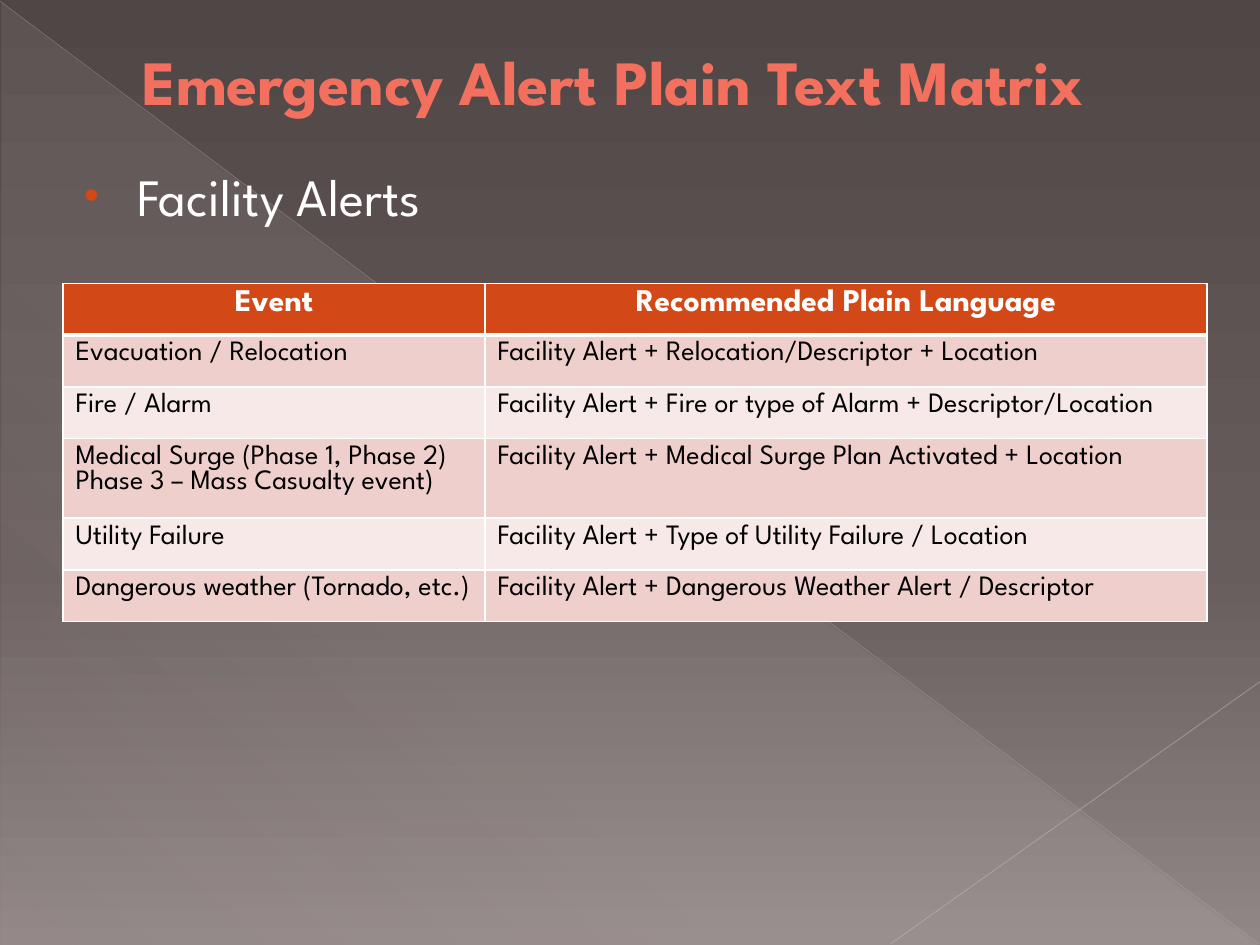
from pptx import Presentation
from pptx.dml.color import RGBColor
from pptx.enum.shapes import MSO_CONNECTOR, MSO_SHAPE
from pptx.enum.text import MSO_ANCHOR, PP_ALIGN
from pptx.oxml import parse_xml
from pptx.oxml.ns import nsdecls
from pptx.util import Inches, Pt

TITLE = "Emergency Alert Plain Text Matrix"
SECTION = "Facility Alerts"
HEADER = ("Event", "Recommended Plain Language")
EVENTS = [
    ("Evacuation / Relocation", "Facility Alert + Relocation/Descriptor + Location"),
    ("Fire / Alarm", "Facility Alert + Fire or type of Alarm + Descriptor/Location"),
    ("Medical Surge (Phase 1, Phase 2)\nPhase 3 – Mass Casualty event)",
     "Facility Alert + Medical Surge Plan Activated + Location"),
    ("Utility Failure", "Facility Alert + Type of Utility Failure / Location"),
    ("Dangerous weather (Tornado, etc.)", "Facility Alert + Dangerous Weather Alert / Descriptor"),
]
COLUMN_WIDTHS = (3.35, 5.73)
ROW_HEIGHT = 0.41
DIAGONALS = [
    ((0, 0.01), (9.99, 7.49), "C1BEBE", 0.39, 35),
    ((10, 5.41), (7.07, 7.49), "C7C5C5", 0.47, 45),
]
THEME = {
    "font": "League Spartan",
    "title": "F4705E", "accent": "D34817", "light": "FFFFFF", "dark": "000000",
    "bands": ("EFCFCC", "F7E9E8"),
    "backdrop": [(0, "4F4646", 100), (60, "685D5D", 100), (100, "928787", 100)],
    "wedge": [(0, "E9E5DC", 10), (70, "E9E5DC", 8), (100, "E9E5DC", 1)],
    "title_size": 36, "section_size": 30, "header_size": 18, "cell_size": 16,
}


def gradient(stops, angle):
    stop_xml = "".join(
        f'<a:gs pos="{position * 1000}"><a:srgbClr val="{color}">'
        f'<a:alpha val="{alpha * 1000}"/></a:srgbClr></a:gs>'
        for position, color, alpha in stops)
    return parse_xml(
        f'<a:gradFill {nsdecls("a")} rotWithShape="1"><a:gsLst>{stop_xml}</a:gsLst>'
        f'<a:lin ang="{angle * 60000}" scaled="0"/></a:gradFill>')


def swap_gradient(fill, holder, stops, angle):
    fill.gradient()
    old = holder.find(".//{*}gradFill")
    old.getparent().replace(old, gradient(stops, angle))


def style(paragraph, size, color, bold=False):
    for run in paragraph.runs:
        run.font.name = THEME["font"]
        run.font.size = Pt(size)
        run.font.bold = bold
        run.font.color.rgb = RGBColor.from_string(color)


def add_backdrop(slide):
    swap_gradient(slide.background.fill, slide.element, THEME["backdrop"], 90)
    wedge = slide.shapes.add_shape(
        MSO_SHAPE.RIGHT_TRIANGLE, Inches(0.01), Inches(0.02), Inches(9.98), Inches(7.48))
    wedge.shadow.inherit = False
    wedge.line.fill.background()
    swap_gradient(wedge.fill, wedge.element, THEME["wedge"], 133)
    for start, end, color, width, alpha in DIAGONALS:
        diagonal = slide.shapes.add_connector(
            MSO_CONNECTOR.STRAIGHT, *map(Inches, start + end))
        diagonal.line.width = Pt(width)
        diagonal.line.color.rgb = RGBColor.from_string(color)
        diagonal.element.find(".//{*}srgbClr").append(
            parse_xml(f'<a:alpha {nsdecls("a")} val="{alpha * 1000}"/>'))
        diagonal.element.spPr.append(parse_xml(f'<a:effectLst {nsdecls("a")}/>'))


def add_title(slide):
    title = slide.shapes.title
    title.left, title.top, title.width, title.height = map(Inches, (0.5, 0.08, 9, 1.12))
    title.text_frame.text = TITLE
    title.text_frame.vertical_anchor = MSO_ANCHOR.MIDDLE
    heading = title.text_frame.paragraphs[0]
    heading.alignment = PP_ALIGN.LEFT
    heading._p.get_or_add_pPr().set("marL", str(Inches(0.53)))
    style(heading, THEME["title_size"], THEME["title"], True)


def add_section(slide):
    section = slide.shapes.add_textbox(*map(Inches, (0.5, 1.25, 9, 0.8)))
    section.text_frame.word_wrap = True
    section.text_frame.text = SECTION
    bullet = section.text_frame.paragraphs[0]
    bullet.space_before = Pt(6)
    style(bullet, THEME["section_size"], THEME["light"])
    properties = bullet._p.get_or_add_pPr()
    properties.set("marL", str(Inches(0.49)))
    properties.set("indent", str(Inches(-0.42)))
    for mark in (f'<a:buClr {nsdecls("a")}><a:srgbClr val="{THEME["accent"]}"/></a:buClr>',
                 f'<a:buSzPct {nsdecls("a")} val="80000"/>',
                 f'<a:buFont {nsdecls("a")} typeface="Arial"/>',
                 f'<a:buChar {nsdecls("a")} char="•"/>'):
        properties.append(parse_xml(mark))


def add_borders(cell, widths):
    for index, (side, width) in enumerate(widths.items()):
        cell._tc.get_or_add_tcPr().insert(index, parse_xml(
            f'<a:ln{side} {nsdecls("a")} w="{Pt(width)}"><a:solidFill>'
            f'<a:srgbClr val="{THEME["light"]}"/></a:solidFill></a:ln{side}>'))


def add_matrix(slide):
    rows = [HEADER, *EVENTS]
    matrix = slide.shapes.add_table(
        len(rows), len(HEADER), Inches(0.5), Inches(2.25),
        Inches(sum(COLUMN_WIDTHS)), Inches(ROW_HEIGHT * len(rows))).table
    for column, width in zip(matrix.columns, COLUMN_WIDTHS):
        column.width = Inches(width)
    for r, texts in enumerate(rows):
        matrix.rows[r].height = Inches(ROW_HEIGHT)
        is_header = r == 0
        for c, text in enumerate(texts):
            cell = matrix.cell(r, c)
            cell.text_frame.text = text
            cell.fill.solid()
            cell.fill.fore_color.rgb = RGBColor.from_string(
                THEME["accent"] if is_header else THEME["bands"][(r - 1) % 2])
            add_borders(cell, {"L": 1, "R": 1, "T": 3 if r == 1 else 1,
                               "B": 3 if is_header else 1})
            for paragraph in cell.text_frame.paragraphs:
                if is_header:
                    paragraph.alignment = PP_ALIGN.CENTER
                    style(paragraph, THEME["header_size"], THEME["light"], True)
                else:
                    style(paragraph, THEME["cell_size"], THEME["dark"])


def main():
    deck = Presentation()
    deck.slide_width, deck.slide_height = Inches(10), Inches(7.5)
    slide = deck.slides.add_slide(deck.slide_layouts[5])
    add_backdrop(slide)
    add_title(slide)
    add_section(slide)
    add_matrix(slide)
    deck.save("out.pptx")


if __name__ == "__main__":
    main()
